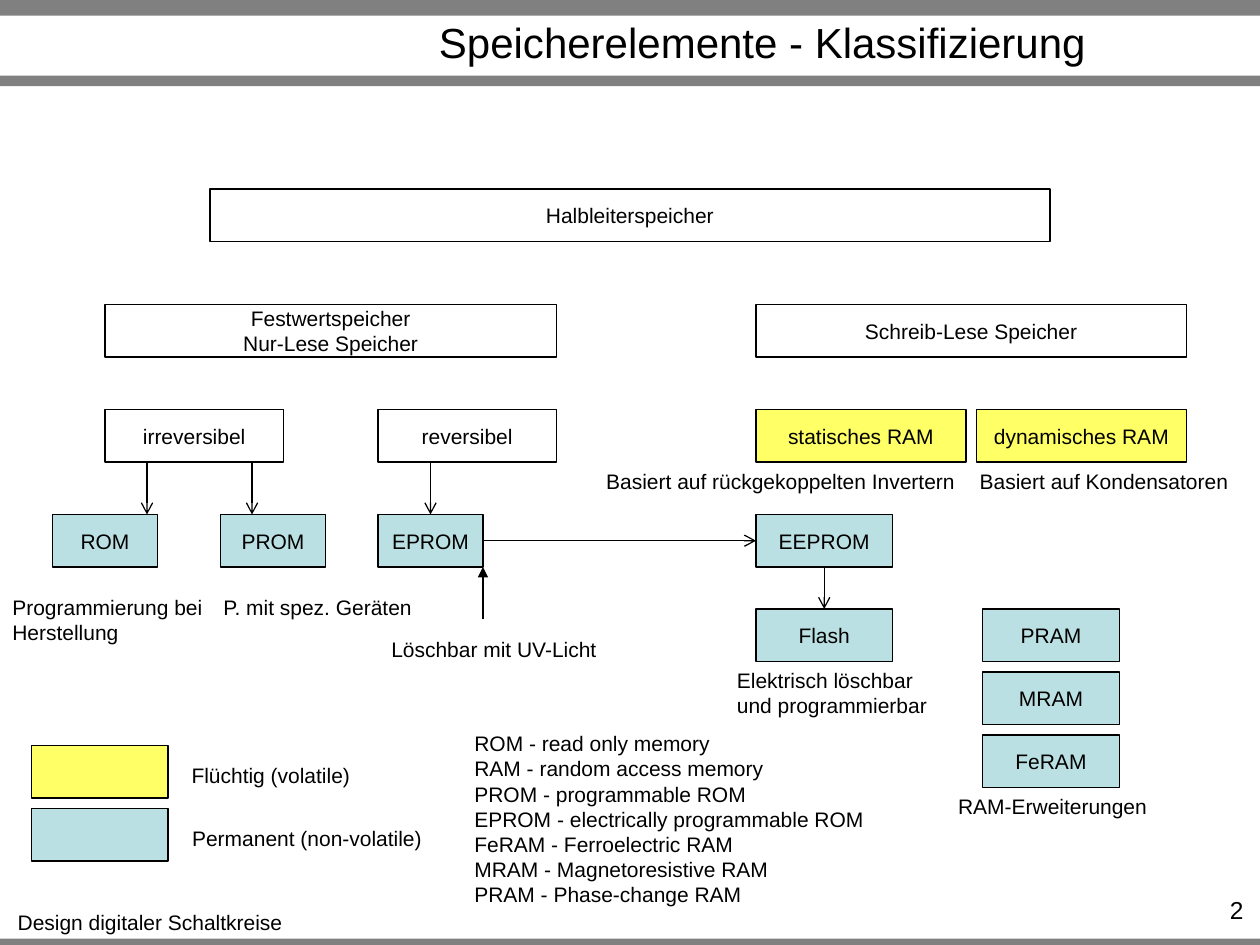
from lxml import etree
from pptx import Presentation
from pptx import util as u
from pptx.dml import color
from pptx.enum import shapes, text
from pptx.oxml import ns

SCALE = 7620
BLACK, WHITE, GRAY = "000000", "FFFFFF", "808080"
YELLOW, TEAL = "FFFF66", "BBE0E3"
BOX_HEIGHT = 50
TOP, LEFT, BOTTOM, RIGHT = range(4)


def px(length):
    return u.Emu(length * SCALE)


def rgb(value):
    return color.RGBColor.from_string(value)


def write(frame, lines, size=12, align=text.PP_ALIGN.CENTER):
    for index, line in enumerate(lines.split("\n")):
        para = frame.paragraphs[0] if index == 0 else frame.add_paragraph()
        para.alignment = align
        span = para.add_run()
        span.text = line
        span.font.size = u.Pt(size)
        span.font.name = "Arial"
        span.font.color.rgb = rgb(BLACK)


def add_box(page, left, top, width, height=BOX_HEIGHT, label="", fill=None, line=BLACK):
    box = page.shapes.add_shape(
        shapes.MSO_SHAPE.RECTANGLE, px(left), px(top), px(width), px(height))
    box.shadow.inherit = False
    if fill:
        box.fill.solid()
        box.fill.fore_color.rgb = rgb(fill)
    else:
        box.fill.background()
    if line:
        box.line.color.rgb = rgb(line)
        box.line.width = u.Pt(0.75)
    else:
        box.line.fill.background()
    if label:
        box.text_frame.vertical_anchor = text.MSO_ANCHOR.MIDDLE
        write(box.text_frame, label)
    return box


def add_note(page, left, top, width, lines, height=36, wrap=False, grow=True, **format):
    note = page.shapes.add_textbox(px(left), px(top), px(width), px(height))
    frame = note.text_frame
    frame.word_wrap = wrap
    if grow:
        frame.auto_size = text.MSO_AUTO_SIZE.SHAPE_TO_FIT_TEXT
    write(frame, lines, **format)


def add_arrow(page, start, end, head="arrow", source=None, target=None):
    arrow = page.shapes.add_connector(
        shapes.MSO_CONNECTOR.STRAIGHT, *map(px, start + end))
    if source:
        arrow.begin_connect(*source)
    if target:
        arrow.end_connect(*target)
    arrow.line.color.rgb = rgb(BLACK)
    arrow.line.width = u.Pt(0.75)
    etree.SubElement(arrow.line._get_or_add_ln(), ns.qn("a:tailEnd"), type=head)
    etree.SubElement(arrow._element.spPr, ns.qn("a:effectLst"))


def draw_frame(page, width, height):
    for top, thickness in ((height - 6, 6), (0, 15), (72, 10)):
        add_box(page, 0, top, width, thickness, fill=GRAY, line=None)
    title = page.shapes.title
    title.left, title.top, title.width, title.height = map(px, (156, 17, 1140, 46))
    title.text_frame.vertical_anchor = text.MSO_ANCHOR.MIDDLE
    write(title.text_frame, "Speicherelemente - Klassifizierung", size=24)
    add_note(page, 4, height - 40, 278, "Design digitaler Schaltkreise")
    add_note(page, width - 108, height - 53, 104, "2", height=29, wrap=True,
             grow=False, size=14, align=text.PP_ALIGN.RIGHT)


def draw_read_only(page, left, top):
    add_box(page, left, top, 430, label="Festwertspeicher\nNur-Lese Speicher")
    for offset, label in ((0, "irreversibel"), (260, "reversibel")):
        add_box(page, left + offset, top + 100, 170, label=label, fill=WHITE)
    rom, prom, eprom = (
        add_box(page, left + offset, top + 200, 100, label=label, fill=TEAL)
        for offset, label in ((-50, "ROM"), (110, "PROM"), (260, "EPROM")))
    for offset, target in ((40, None), (140, None), (310, (eprom, TOP))):
        x = left + offset
        add_arrow(page, (x, top + 150), (x, top + 200), target=target)
    add_arrow(page, (left + 360, top + 300), (left + 360, top + 250), head="triangle")
    add_note(page, left - 100, top + 270, 214, "Programmierung bei Herstellung",
             height=60, wrap=True, align=text.PP_ALIGN.LEFT)
    add_note(page, left + 100, top + 270, 205, "P. mit spez. Geräten")
    add_note(page, left + 260, top + 310, 221, "Löschbar mit UV-Licht")
    return eprom


def draw_read_write(page, left, top):
    add_box(page, left, top, 410, label="Schreib-Lese Speicher")
    for offset, label in ((0, "statisches RAM"), (210, "dynamisches RAM")):
        add_box(page, left + offset, top + 100, 200, label=label, fill=YELLOW)
    add_note(page, left - 156, top + 150, 359, "Basiert auf rückgekoppelten Invertern")
    add_note(page, left + 200, top + 150, 263, "Basiert auf Kondensatoren")


def draw_erasable(page, left, top, eprom):
    eeprom = add_box(page, left, top, 130, label="EEPROM", fill=TEAL)
    flash = add_box(page, left, top + 90, 130, label="Flash", fill=TEAL)
    for source, target in (((eprom, RIGHT), (eeprom, LEFT)),
                           ((eeprom, BOTTOM), (flash, TOP))):
        add_arrow(page, (left, top), (left, top), source=source, target=target)
    add_note(page, left - 30, top + 140, 208, "Elektrisch löschbar und programmierbar",
             height=60, wrap=True, align=text.PP_ALIGN.LEFT)


def draw_extensions(page, left, top):
    for row, label in enumerate(("PRAM", "MRAM", "FeRAM")):
        add_box(page, left, top + 60 * row, 130, label=label, fill=TEAL)
    add_note(page, left - 36, top + 170, 205, "RAM-Erweiterungen")


def draw_legend(page, left, top):
    entries = ((YELLOW, "Flüchtig (volatile)", 176),
               (TEAL, "Permanent (non-volatile)", 245))
    for row, (fill, label, width) in enumerate(entries):
        add_box(page, left, top + 60 * row, 130, fill=fill)
        add_note(page, left + 140, top + 60 * row + 10, width, label)


def draw_glossary(page, left, top):
    terms = (
        "ROM - read only memory",
        "RAM - random access memory",
        "PROM - programmable ROM",
        "EPROM - electrically programmable ROM",
        "FeRAM - Ferroelectric RAM",
        "MRAM - Magnetoresistive RAM",
        "PRAM - Phase-change RAM",
    )
    add_note(page, left, top, 403, "\n".join(terms), height=181, align=text.PP_ALIGN.LEFT)


def main():
    deck = Presentation()
    deck.slide_width, deck.slide_height = px(1200), px(900)
    page = deck.slides.add_slide(deck.slide_layouts[5])
    draw_frame(page, 1200, 900)
    add_box(page, 200, 180, 800, label="Halbleiterspeicher")
    eprom = draw_read_only(page, 100, 290)
    draw_read_write(page, 720, 290)
    draw_erasable(page, 720, 490, eprom)
    draw_extensions(page, 936, 580)
    draw_legend(page, 30, 710)
    draw_glossary(page, 440, 690)
    deck.save("out.pptx")


if __name__ == "__main__":
    main()
